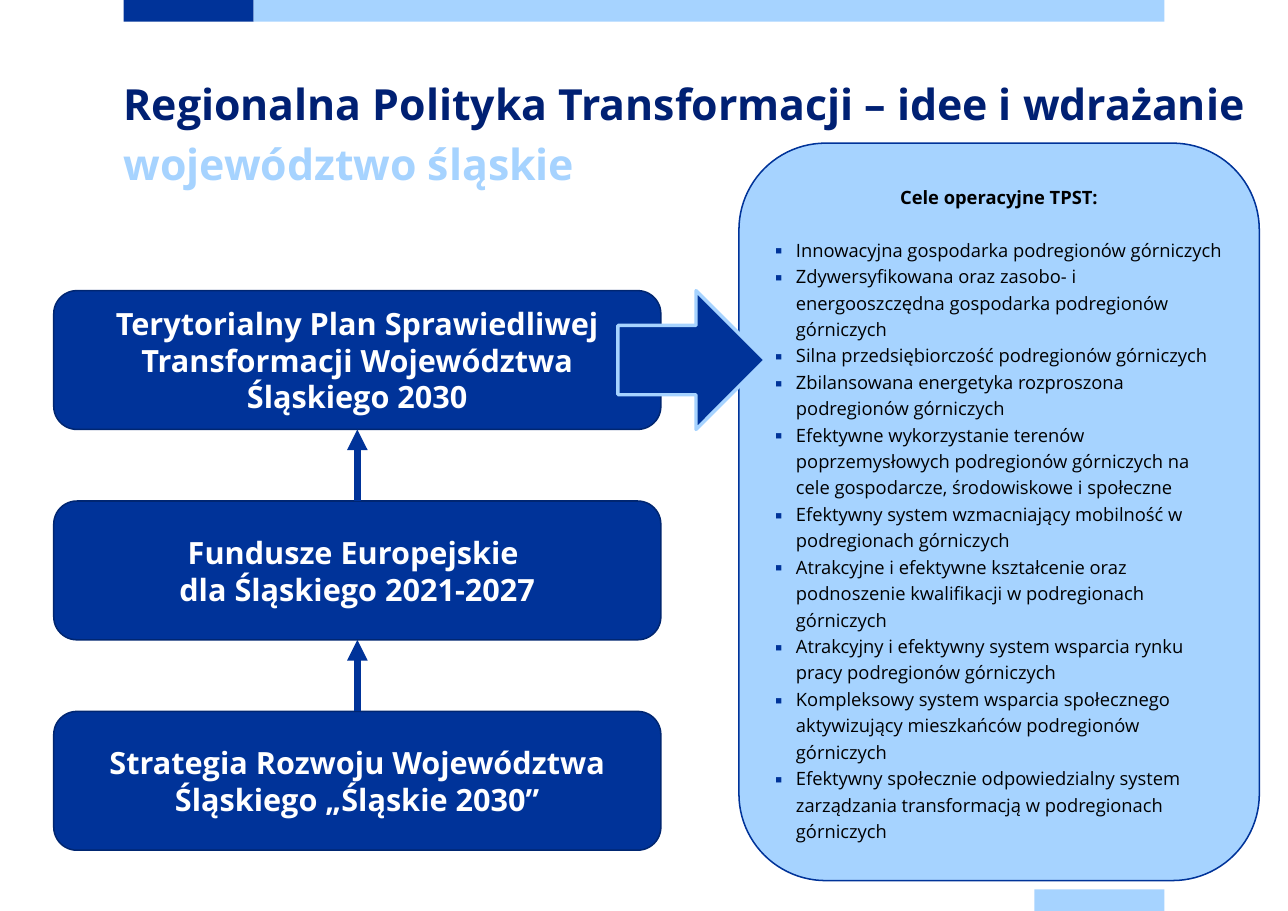
from lxml.etree import SubElement
from pptx import Presentation
from pptx.dml.color import RGBColor
from pptx.enum.shapes import MSO_CONNECTOR as Connector, MSO_SHAPE as Shape
from pptx.enum.text import MSO_ANCHOR as Anchor, MSO_AUTO_SIZE as AutoSize, PP_ALIGN as Align
from pptx.oxml.ns import qn
from pptx.util import Cm, Pt

FONT = "Open Sans"
COLORS = {
    "blue": "003399",
    "outline": "002671",
    "title": "002073",
    "light": "A6D3FF",
    "white": "FFFFFF",
    "black": "000000",
}
TITLE = "Regionalna Polityka Transformacji – idee i wdrażanie"
SUBTITLE = "województwo śląskie"
STRIPS = [
    (2.85, 0, 3, "blue"),
    (5.85, 0, 21, "light"),
    (23.85, 20.5, 3, "light"),
]
STRIP_HEIGHT = 0.5
PLANS = [
    ["Terytorialny Plan Sprawiedliwej Transformacji Województwa Śląskiego 2030"],
    ["Fundusze Europejskie ", "dla Śląskiego 2021-2027"],
    ["Strategia Rozwoju Województwa Śląskiego „Śląskie 2030”"],
]
GOALS_HEADING = "Cele operacyjne TPST:"
GOALS = [
    "Innowacyjna gospodarka podregionów górniczych",
    "Zdywersyfikowana oraz zasobo- i energooszczędna gospodarka podregionów górniczych",
    "Silna przedsiębiorczość podregionów górniczych",
    "Zbilansowana energetyka rozproszona podregionów górniczych",
    "Efektywne wykorzystanie terenów poprzemysłowych podregionów górniczych "
    "na cele gospodarcze, środowiskowe i społeczne",
    "Efektywny system wzmacniający mobilność w podregionach górniczych",
    "Atrakcyjne i efektywne kształcenie oraz podnoszenie kwalifikacji w podregionach górniczych",
    "Atrakcyjny i efektywny system wsparcia rynku pracy podregionów górniczych",
    "Kompleksowy system wsparcia społecznego aktywizujący mieszkańców podregionów górniczych",
    "Efektywny społecznie odpowiedzialny system zarządzania transformacją "
    "w podregionach górniczych",
]
PLAN_LEFT, PLAN_TOP, PLAN_WIDTH, PLAN_HEIGHT, PLAN_STEP = 1.24, 6.7, 14, 3.2, 4.85


def color(name):
    return RGBColor.from_string(COLORS[name])


def style(paragraph, size, tint, bold=True, align=Align.CENTER):
    paragraph.alignment = align
    font = paragraph.font
    font.name, font.size, font.bold = FONT, Pt(size), bold
    font.color.rgb = color(tint)


def add_box(page, kind, left, top, width, height, fill, line=None, weight=1):
    box = page.shapes.add_shape(kind, Cm(left), Cm(top), Cm(width), Cm(height))
    box.shadow.inherit = False
    box.fill.solid()
    box.fill.fore_color.rgb = color(fill)
    if line:
        box.line.color.rgb = color(line)
        box.line.width = Pt(weight)
    else:
        box.line.fill.background()
    box.text_frame.word_wrap = True
    box.text_frame.vertical_anchor = Anchor.MIDDLE
    return box


def write_heading(box, top, text, tint):
    box.left, box.top, box.width, box.height = Cm(2.85), Cm(top), Cm(26.2), Cm(1.4)
    frame = box.text_frame
    frame.text = text
    frame.word_wrap = True
    frame.auto_size = AutoSize.NONE
    frame.vertical_anchor = Anchor.TOP
    frame.margin_left = frame.margin_top = frame.margin_right = frame.margin_bottom = 0
    para = frame.paragraphs[0]
    para.line_spacing = Pt(36)
    style(para, 28, tint, align=Align.LEFT)


def add_up_arrow(page, x, start, end):
    arrow = page.shapes.add_connector(Connector.STRAIGHT, Cm(x), Cm(start), Cm(x), Cm(end))
    arrow.line.color.rgb = color("blue")
    arrow.line.width = Pt(4.5)
    SubElement(arrow.line._get_or_add_ln(), qn("a:tailEnd"), type="triangle")
    SubElement(arrow._element.spPr, qn("a:effectLst"))


def add_bullet(para):
    props = para._p.get_or_add_pPr()
    props.set("marL", str(Cm(0.48)))
    props.set("indent", str(-Cm(0.48)))
    tint = SubElement(props, qn("a:buClr"))
    SubElement(tint, qn("a:srgbClr"), val=COLORS["blue"])
    SubElement(props, qn("a:buFont"), typeface=FONT)
    SubElement(props, qn("a:buChar"), char="▪")


def add_plans(page):
    for index, lines in enumerate(PLANS):
        top = PLAN_TOP + index * PLAN_STEP
        box = add_box(page, Shape.ROUNDED_RECTANGLE, PLAN_LEFT, top,
                      PLAN_WIDTH, PLAN_HEIGHT, "blue", "outline")
        box.text_frame.text = "\n".join(lines)
        for para in box.text_frame.paragraphs:
            style(para, 20, "white")
        if index:
            add_up_arrow(page, PLAN_LEFT + PLAN_WIDTH / 2, top, top - PLAN_STEP + PLAN_HEIGHT)


def add_goals(page):
    panel = add_box(page, Shape.ROUNDED_RECTANGLE, 17.04, 3.3, 12, 17, "light", "blue")
    frame = panel.text_frame
    frame.text = "\n".join([GOALS_HEADING, *GOALS])
    heading, *goals = frame.paragraphs
    heading.line_spacing = 1.2
    style(heading, 12, "black")
    for para in goals:
        para.line_spacing = 1.2
        if para is goals[0]:
            para.space_before = Pt(17.3)
        add_bullet(para)
        style(para, 12, "black", bold=False, align=Align.LEFT)


def main():
    deck = Presentation()
    deck.slide_width, deck.slide_height = Cm(29.7), Cm(21)
    page = deck.slides.add_slide(deck.slide_layouts[5])
    for left, top, width, fill in STRIPS:
        add_box(page, Shape.RECTANGLE, left, top, width, STRIP_HEIGHT, fill)
    write_heading(page.shapes.title, 1.7, TITLE, "title")
    write_heading(page.shapes.add_textbox(0, 0, 0, 0), 3.1, SUBTITLE, "light")
    add_plans(page)
    add_goals(page)
    add_box(page, Shape.RIGHT_ARROW, 14.25, PLAN_TOP, 3.4, PLAN_HEIGHT, "blue", "light", 2.25)
    deck.save("out.pptx")


if __name__ == "__main__":
    main()
